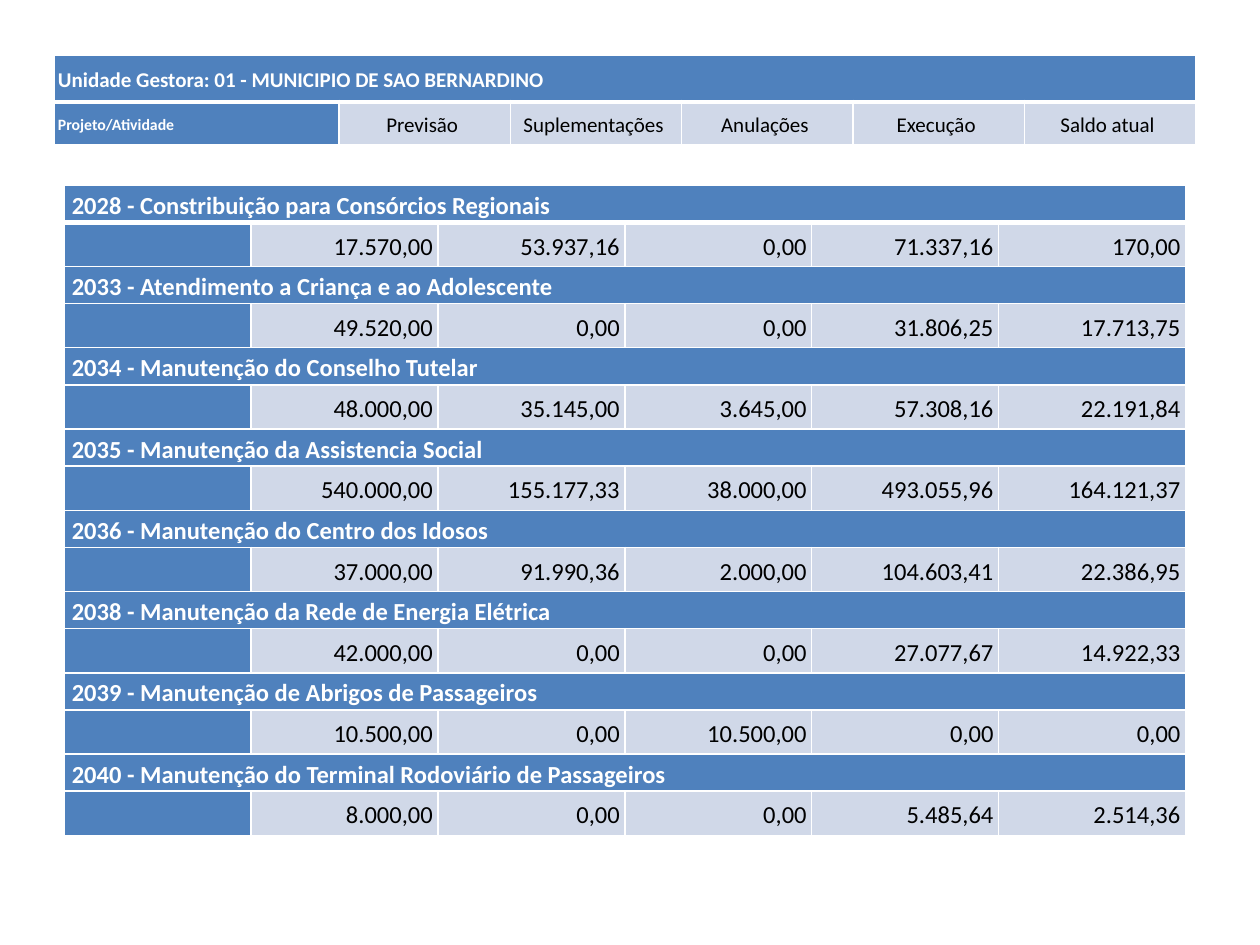
from lxml import etree
from pptx import Presentation
from pptx.dml.color import RGBColor
from pptx.enum.text import MSO_ANCHOR, PP_ALIGN
from pptx.oxml.ns import qn
from pptx.util import Inches, Pt

MIDDLE = MSO_ANCHOR.MIDDLE
LEFT, CENTER, RIGHT = PP_ALIGN.LEFT, PP_ALIGN.CENTER, PP_ALIGN.RIGHT
COLORS = {"blue": "4F81BD", "pale": "D0D8E8", "white": "FFFFFF", "black": "000000"}

HEADINGS = ["Previsão ", "Suplementações ", "Anulações ", "Execução ", "Saldo atual "]
PROJECTS = [
    ("2028 - Constribuição para Consórcios Regionais",
     ["17.570,00", "53.937,16", "0,00", "71.337,16", "170,00"]),
    ("2033 - Atendimento a Criança e ao Adolescente",
     ["49.520,00", "0,00", "0,00", "31.806,25", "17.713,75"]),
    ("2034 - Manutenção do Conselho Tutelar",
     ["48.000,00", "35.145,00", "3.645,00", "57.308,16", "22.191,84"]),
    ("2035 - Manutenção da Assistencia Social",
     ["540.000,00", "155.177,33", "38.000,00", "493.055,96", "164.121,37"]),
    ("2036 - Manutenção do Centro dos Idosos",
     ["37.000,00", "91.990,36", "2.000,00", "104.603,41", "22.386,95"]),
    ("2038 - Manutenção da Rede de Energia Elétrica",
     ["42.000,00", "0,00", "0,00", "27.077,67", "14.922,33"]),
    ("2039 - Manutenção de Abrigos de Passageiros",
     ["10.500,00", "0,00", "10.500,00", "0,00", "0,00"]),
    ("2040 - Manutenção do Terminal Rodoviário de Passageiros",
     ["8.000,00", "0,00", "0,00", "5.485,64", "2.514,36"]),
]


def add_plain_table(page, left, top, widths, heights):
    """Add an unbanded table with the given column widths and row heights."""
    frame = page.shapes.add_table(len(heights), len(widths), Inches(left), Inches(top),
                                  Inches(sum(widths)), Inches(sum(heights)))
    table = frame.table
    table.first_row = table.horz_banding = False
    for column, width in zip(table.columns, widths):
        column.width = Inches(width)
    for row, height in zip(table.rows, heights):
        row.height = Inches(height)
    return table


def fill_cell(cell, text, size, side, edge, align=LEFT, heading=True, bottom_line=1):
    """Style a cell; side and edge are its horizontal and vertical margins."""
    cell.margin_left = cell.margin_right = Inches(side)
    cell.margin_top = cell.margin_bottom = Inches(edge)
    cell.vertical_anchor = MIDDLE
    properties = cell._tc.get_or_add_tcPr()
    for tag, width in (("lnL", 1), ("lnR", 1), ("lnT", 1), ("lnB", bottom_line)):
        line = etree.SubElement(properties, qn(f"a:{tag}"), w=str(Pt(width)))
        solid = etree.SubElement(line, qn("a:solidFill"))
        etree.SubElement(solid, qn("a:srgbClr"), val=COLORS["white"])
    cell.fill.solid()
    cell.fill.fore_color.rgb = RGBColor.from_string(COLORS["blue" if heading else "pale"])
    para = cell.text_frame.paragraphs[0]
    para.alignment = align
    para.line_spacing = 1.15
    if text:
        span = para.add_run()
        span.text = text
        span.font.name = "Calibri"
        span.font.size = Pt(size)
        span.font.bold = heading
        span.font.color.rgb = RGBColor.from_string(COLORS["white" if heading else "black"])
    else:
        para._p.get_or_add_endParaRPr().set("sz", str(size * 100))


deck = Presentation()
deck.slide_width, deck.slide_height = Inches(10), Inches(7.5)
page = deck.slides.add_slide(deck.slide_layouts[6])

# Managing unit and column headings
header = add_plain_table(page, 0.43, 0.44, [2.26] + [1.36] * 5, [0.37, 0.34])
unit = "Unidade Gestora: 01 - MUNICIPIO DE SAO BERNARDINO"
for col in range(6):
    fill_cell(header.cell(0, col), "" if col else unit, 12, 0.03, 0.01, bottom_line=3)
header.cell(0, 0).merge(header.cell(0, 5))
fill_cell(header.cell(1, 0), "Projeto/Atividade", 9, 0.03, 0.01)
for col, heading in enumerate(HEADINGS, start=1):
    fill_cell(header.cell(1, col), heading, 12, 0.03, 0.01, CENTER, heading=False)

# One title row and one row of amounts per project
amount_height = 0.35
title_height = 5.16 / len(PROJECTS) - amount_height
budget = add_plain_table(page, 0.51, 1.47, [8.9 / 6] * 6,
                         [title_height, amount_height] * len(PROJECTS))
for index, (title, amounts) in enumerate(PROJECTS):
    row = 2 * index
    for col in range(6):
        fill_cell(budget.cell(row, col), "" if col else title, 14, 0.06, 0.01,
                  bottom_line=1 if index else 3)
    budget.cell(row, 0).merge(budget.cell(row, 5))
    fill_cell(budget.cell(row + 1, 0), "", 14, 0.06, 0.01)
    for col, amount in enumerate(amounts, start=1):
        fill_cell(budget.cell(row + 1, col), amount, 14, 0.04, 0.03, RIGHT, heading=False)

deck.save("out.pptx")
